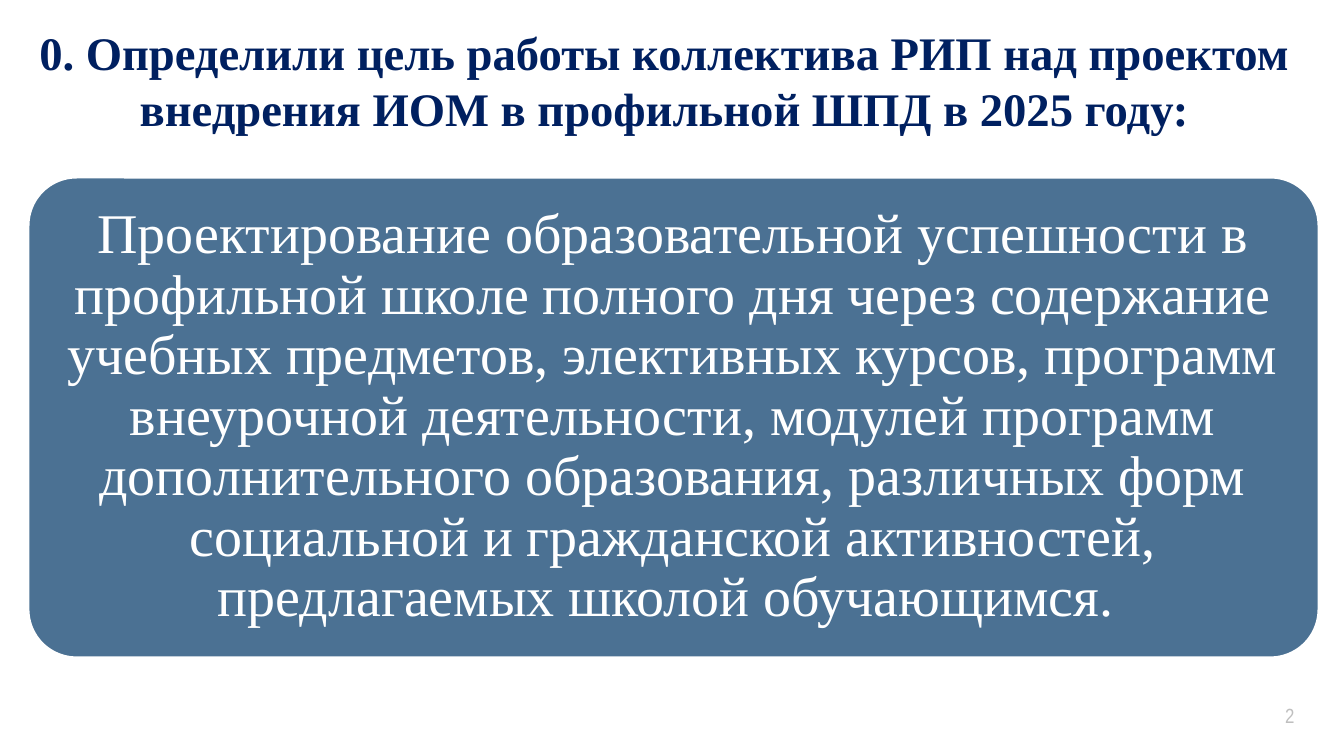
"""Build the slide that states the goal of the project team."""
from lxml import etree
from pptx import Presentation
from pptx.dml.color import RGBColor
from pptx.enum.shapes import MSO_SHAPE
from pptx.enum.text import MSO_ANCHOR, MSO_AUTO_SIZE, PP_ALIGN
from pptx.oxml.ns import qn
from pptx.util import Pt

ROUNDED = MSO_SHAPE.ROUNDED_RECTANGLE
TOP, MIDDLE = MSO_ANCHOR.TOP, MSO_ANCHOR.MIDDLE
CENTER, RIGHT = PP_ALIGN.CENTER, PP_ALIGN.RIGHT
NO_AUTOFIT, FIT_SHAPE = MSO_AUTO_SIZE.NONE, MSO_AUTO_SIZE.SHAPE_TO_FIT_TEXT

NAVY = RGBColor(0x00, 0x20, 0x60)
BLUE = RGBColor(0x1F, 0x4E, 0x79)
WHITE = RGBColor(0xFF, 0xFF, 0xFF)
GRAY = RGBColor(0xBF, 0xBF, 0xBF)
SERIF, NARROW = "Times New Roman", "Arial Narrow"

TITLE = "0. Определили цель работы коллектива РИП над проектом внедрения ИОМ в профильной ШПД в 2025 году:"
GOAL = (
    "Проектирование образовательной успешности в профильной школе полного дня "
    "через содержание учебных предметов, элективных курсов, программ внеурочной "
    "деятельности, модулей программ дополнительного образования, различных форм "
    "социальной и гражданской активностей, предлагаемых школой обучающимся. "
)


def set_attributes(target, values):
    """Set each named attribute of the target."""
    for name, value in values.items():
        setattr(target, name, value)


def place(shape, left, top, width, height):
    """Move and size a shape, in points."""
    set_attributes(shape, {"left": Pt(left), "top": Pt(top), "width": Pt(width), "height": Pt(height)})


def write_text(shape, text, color, font, insets=(5, 3), anchor=MIDDLE,
               alignment=CENTER, spacing=1.0, auto_size=NO_AUTOFIT):
    """Fill a shape with one formatted paragraph."""
    frame = shape.text_frame
    side, edge = map(Pt, insets)
    set_attributes(frame, {
        "word_wrap": True, "auto_size": auto_size, "vertical_anchor": anchor,
        "margin_left": side, "margin_right": side, "margin_top": edge, "margin_bottom": edge,
    })
    paragraph = frame.paragraphs[0]
    set_attributes(paragraph, {"alignment": alignment, "line_spacing": spacing, "space_before": Pt(0)})
    run = paragraph.add_run()
    run.text = text
    set_attributes(run.font, font)
    run.font.color.rgb = color


def add_text(slide, box, text, color, font, **layout):
    """Add a text box at the given place."""
    shape = slide.shapes.add_textbox(*map(Pt, box))
    write_text(shape, text, color, font, **layout)


def add_panel(slide, box, color, opacity):
    """Add a translucent rounded panel with a white outline."""
    shape = slide.shapes.add_shape(ROUNDED, *map(Pt, box))
    shape.adjustments[0] = 0.1
    shape.shadow.inherit = False
    shape.fill.solid()
    shape.fill.fore_color.rgb = color
    shape.line.color.rgb = WHITE
    shape.line.width = Pt(1)
    fill_color = shape.fill._xPr.find(qn("a:solidFill")).find(qn("a:srgbClr"))
    etree.SubElement(fill_color, qn("a:alpha")).set("val", str(opacity * 1000))


def main():
    """Compose the slide and save it."""
    presentation = Presentation()
    set_attributes(presentation, {"slide_width": Pt(720), "slide_height": Pt(405)})
    slide = presentation.slides.add_slide(presentation.slide_layouts[5])
    title = slide.shapes.title
    place(title, 0, 10, 711.5, 66)
    write_text(title, TITLE, NAVY, {"name": SERIF, "size": Pt(25), "bold": True},
               anchor=TOP, auto_size=FIT_SHAPE)
    add_panel(slide, (15.3, 95.2, 691, 257), BLUE, 80)
    add_text(slide, (22.5, 102.5, 676, 242), GOAL, WHITE, {"name": SERIF, "size": Pt(30)},
             insets=(9, 9), spacing=0.9)
    add_text(slide, (663, 373, 35.5, 20), "2", GRAY, {"name": NARROW, "size": Pt(11)},
             alignment=RIGHT)
    presentation.save("out.pptx")


if __name__ == "__main__":
    main()
